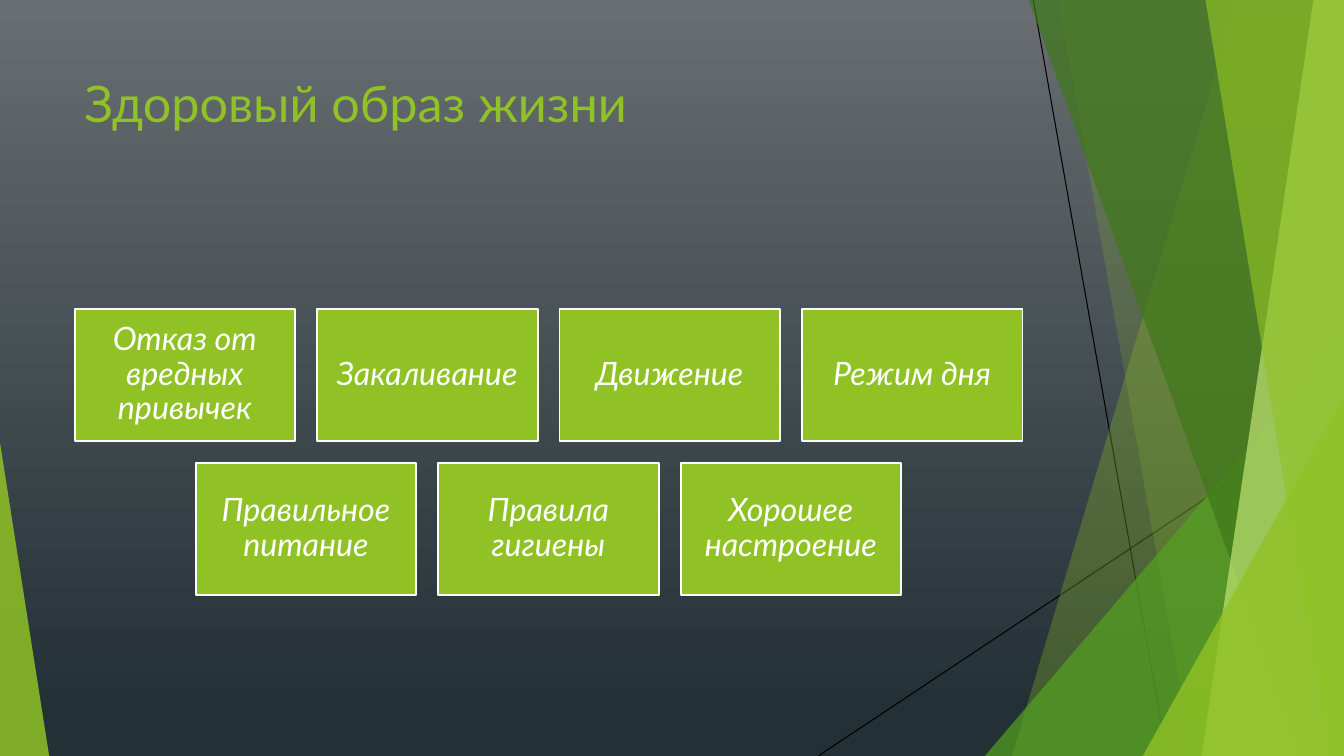
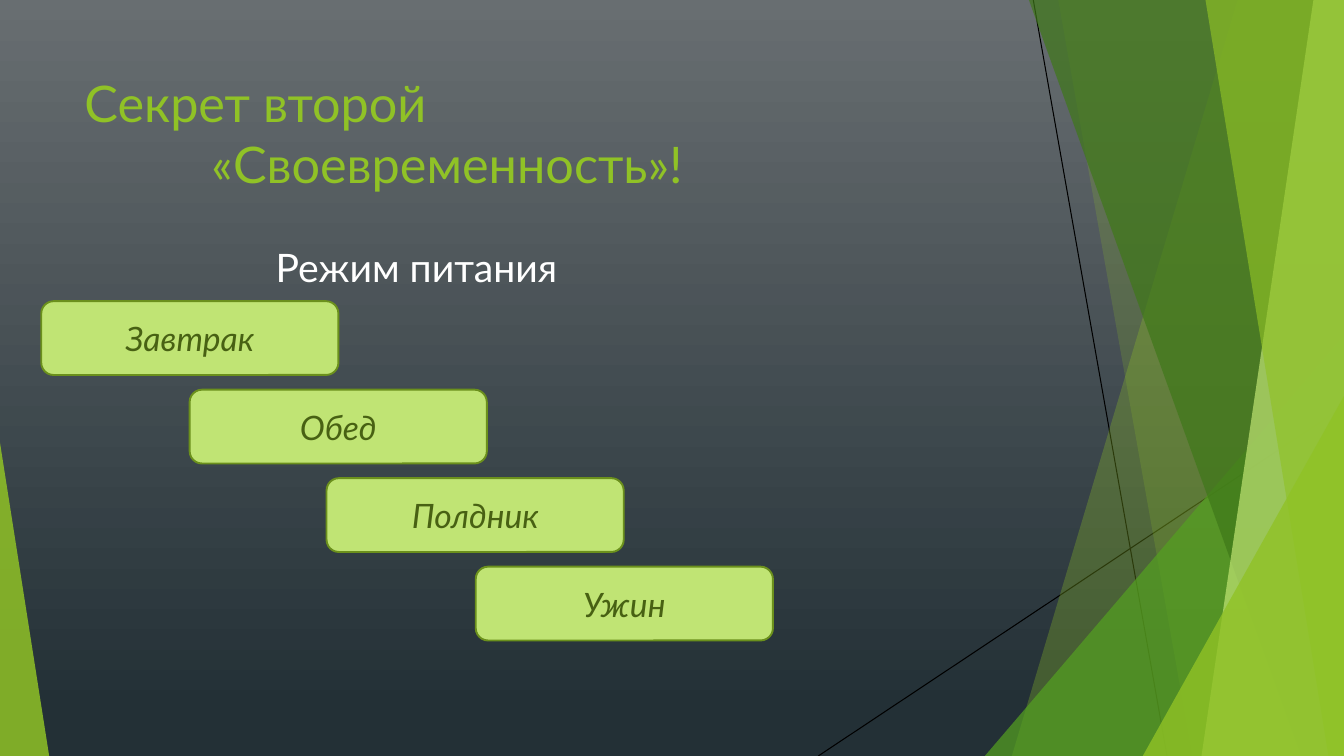
import lxml.etree
import pptx
import pptx.dml.color
import pptx.enum.shapes
import pptx.enum.text
import pptx.oxml.ns
import pptx.util
from pptx.util import Cm

WIDTH, HEIGHT = 33.87, 19.05
LEFT, CONTENT_WIDTH = 1.88, 23.88
FONT = "Lato"
GREEN, LIGHT_GREEN, LEAF, FOREST = "90C226", "C0E474", "54A021", "3F7819"
EDGE_GREEN, DARK_GREEN = "6B901C", "486113"
WHITE, BLACK = "FFFFFF", "000000"
BACKGROUND = [(0, "686E71"), (0.94, "233036")]
SHAPES = pptx.enum.shapes.MSO_SHAPE
ALIGN = pptx.enum.text.PP_ALIGN
ANCHOR = pptx.enum.text.MSO_ANCHOR


def set_colour(colour_format, value):
    colour_format.rgb = pptx.dml.color.RGBColor.from_string(value)


def write(shape, lines, size, colour, centred=False):
    """Fill a shape with one paragraph per line; centred text is italic."""
    frame = shape.text_frame
    frame.word_wrap = True
    frame.vertical_anchor = ANCHOR.MIDDLE if centred else ANCHOR.TOP
    frame.text = "\n".join(lines)
    for paragraph in frame.paragraphs:
        paragraph.alignment = ALIGN.CENTER if centred else ALIGN.LEFT
        paragraph.font.name = FONT
        paragraph.font.size = pptx.util.Pt(size)
        paragraph.font.italic = centred
        set_colour(paragraph.font.color, colour)


presentation = pptx.Presentation()
presentation.slide_width = Cm(WIDTH)
presentation.slide_height = Cm(HEIGHT)

# Thin lines: start x, start y, end x, end y
thin_lines = [(26.04, 0, 29.41, HEIGHT), (WIDTH, 10.24, 20.62, HEIGHT)]

# Bands reach the right edge: top x, bottom x.
# Triangles stand on the bottom edge: left, width, height, apex.
decorations = [
    ("band", (31.19, 25.5), GREEN, 30),
    ("band", (26.67, 30.05), GREEN, 20),
    ("triangle", (24.82, 9.05, 10.59, 1), LEAF, 72),
    ("band", (25.93, 32.79), FOREST, 70),
    ("band", (33.1, 30.28), LIGHT_GREEN, 70),
    ("band", (30.38, 33.48), GREEN, 65),
    ("triangle", (28.8, 5.07, 9.07, 1), GREEN, 80),
    ("triangle", (0, 1.24, 7.9, 0), GREEN, 85),
]

titles = [["Здоровый образ жизни"], ["Секрет второй", "«Своевременность»!"]]
slides, title_boxes = [], []
for title in titles:
    slide = presentation.slides.add_slide(presentation.slide_layouts[6])
    fill = slide.background.fill
    fill.gradient()
    fill.gradient_angle = 270
    for stop, (position, colour) in zip(fill.gradient_stops, BACKGROUND):
        stop.position = position
        set_colour(stop.color, colour)

    for ends in thin_lines:
        connector = slide.shapes.add_connector(
            pptx.enum.shapes.MSO_CONNECTOR.STRAIGHT, *[Cm(end) for end in ends])
        set_colour(connector.line.color, BLACK)
        connector.line.width = pptx.util.Pt(0.75)
        lxml.etree.SubElement(connector.element.spPr, pptx.oxml.ns.qn("a:effectLst"))

    for kind, geometry, colour, opacity in decorations:
        if kind == "band":
            top_x, bottom_x = geometry
            builder = slide.shapes.build_freeform(Cm(top_x), 0)
            corners = [(WIDTH, 0), (WIDTH, HEIGHT), (bottom_x, HEIGHT)]
            builder.add_line_segments([(Cm(x), Cm(y)) for x, y in corners])
            shape = builder.convert_to_shape()
        else:
            left, width, height, apex = geometry
            shape = slide.shapes.add_shape(
                SHAPES.ISOSCELES_TRIANGLE,
                Cm(left), Cm(HEIGHT - height), Cm(width), Cm(height))
            shape.adjustments[0] = apex
        shape.shadow.inherit = False
        shape.line.fill.background()
        shape.fill.solid()
        set_colour(shape.fill.fore_color, colour)
        fill_colour = shape.element.spPr.find(".//" + pptx.oxml.ns.qn("a:srgbClr"))
        alpha = lxml.etree.SubElement(fill_colour, pptx.oxml.ns.qn("a:alpha"))
        alpha.set("val", str(opacity * 1000))

    title_box = slide.shapes.add_textbox(Cm(LEFT), Cm(1.7), Cm(CONTENT_WIDTH), Cm(3.66))
    write(title_box, title, 36, GREEN)
    slides.append(slide)
    title_boxes.append(title_box)

lifestyle_slide, meals_slide = slides

# Slide 2: second title line and subtitle are indented
second_line = title_boxes[1].text_frame.paragraphs[1]
second_line._p.get_or_add_pPr().set("marL", str(Cm(3.2)))
subtitle = meals_slide.shapes.add_textbox(Cm(6.7), Cm(6), Cm(12), Cm(1.5))
write(subtitle, ["Режим питания"], 28, WHITE)

# Slide 1: rows of cards, each row centred on the widest one
card_rows = [
    ["Отказ от вредных привычек", "Закаливание", "Движение", "Режим дня"],
    ["Правильное питание", "Правила гигиены", "Хорошее настроение"],
]
CARD_WIDTH, CARD_HEIGHT, CARD_GAP = 5.56, 3.33, 0.55
card_pitch = CARD_WIDTH + CARD_GAP
boxes = []
for row, labels in enumerate(card_rows):
    row_left = LEFT + (len(card_rows[0]) - len(labels)) * card_pitch / 2
    for column, label in enumerate(labels):
        card = lifestyle_slide.shapes.add_shape(
            SHAPES.RECTANGLE,
            Cm(row_left + column * card_pitch),
            Cm(7.78 + row * (CARD_HEIGHT + CARD_GAP)),
            Cm(CARD_WIDTH), Cm(CARD_HEIGHT))
        write(card, [label], 23, WHITE, centred=True)
        card.text_frame.paragraphs[0].line_spacing = 0.9
        boxes.append((card, GREEN, WHITE))

# Slide 2: meals as descending steps
meals = [("Завтрак", 1.04), ("Обед", 4.78), ("Полдник", 8.23), ("Ужин", 11.99)]
for index, (meal, left) in enumerate(meals):
    step = meals_slide.shapes.add_shape(
        SHAPES.ROUNDED_RECTANGLE, Cm(left), Cm(7.59 + index * 2.23), Cm(7.49), Cm(1.86))
    write(step, [meal], 24, DARK_GREEN, centred=True)
    boxes.append((step, LIGHT_GREEN, EDGE_GREEN))

for box, fill_value, line_value in boxes:
    box.shadow.inherit = False
    box.fill.solid()
    set_colour(box.fill.fore_color, fill_value)
    set_colour(box.line.color, line_value)
    box.line.width = pptx.util.Pt(1.35)

presentation.save("out.pptx")
